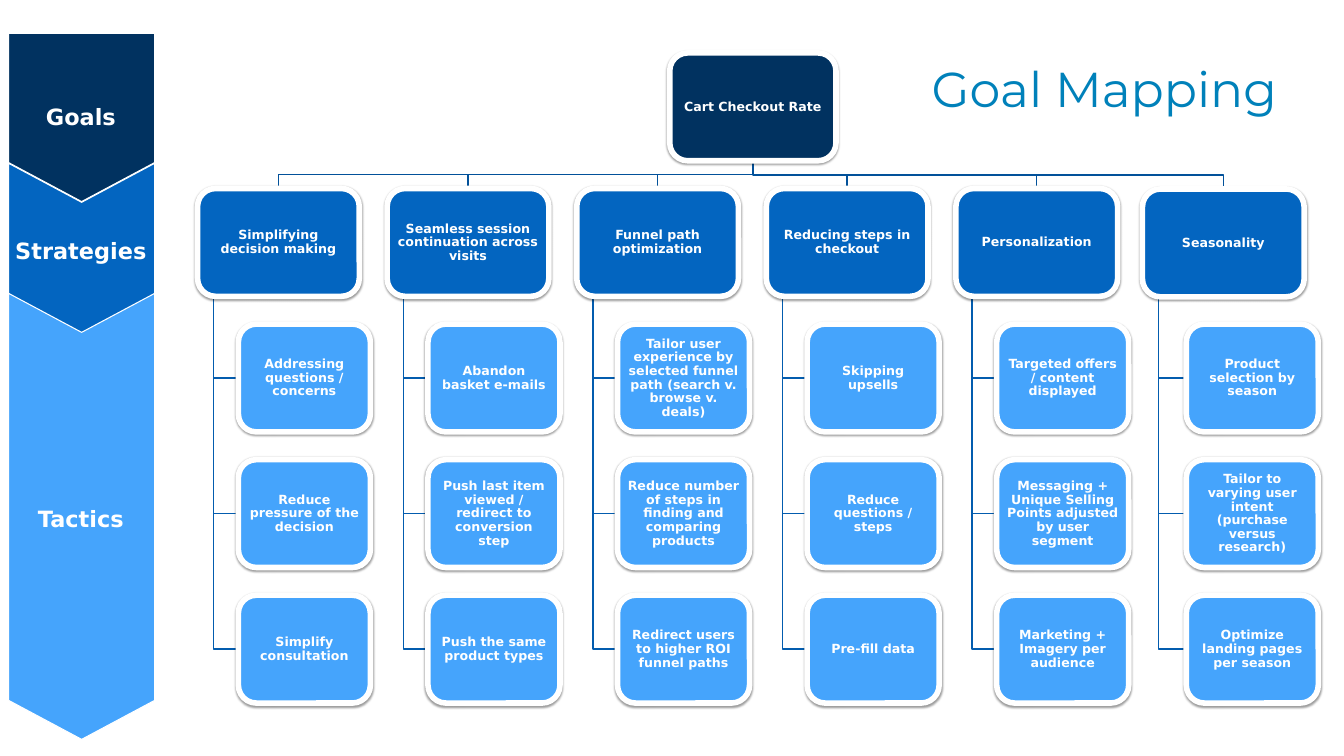
from lxml import etree
from pptx import Presentation
from pptx.dml.color import RGBColor
from pptx.enum import shapes, text
from pptx.oxml import ns
from pptx.util import Inches, Pt

COLORS = {
    "goal": "013260",
    "strategy": "0365C0",
    "tactic": "45A4FC",
    "trunk": "02519A",
    "branch": "035CAE",
    "title": "0081BA",
    "white": "FFFFFF",
    "shadow": "000000",
}
CARD_HEIGHT = 2.14
ROOT_BOX = (13.29, 1.05, 3.3, CARD_HEIGHT)
STRATEGY_WIDTH = 3.21
TACTIC_WIDTH = 2.62
ROW_STEP = 2.69
STEM_OFFSET = 0.32

COLUMNS = [
    ("Simplifying decision making",
     ["Addressing questions / concerns",
      "Reduce pressure of the decision",
      "Simplify consultation"]),
    ("Seamless session continuation across visits",
     ["Abandon basket e-mails",
      "Push last item viewed / redirect to conversion step",
      "Push the same product types"]),
    ("Funnel path optimization",
     ["Tailor user experience by selected funnel path (search v. browse v. deals)",
      "Reduce number of steps in finding and comparing products",
      "Redirect users to higher ROI funnel paths"]),
    ("Reducing steps in checkout",
     ["Skipping upsells", "Reduce questions / steps", "Pre-fill data"]),
    ("Personalization",
     ["Targeted offers / content displayed",
      "Messaging + Unique Selling Points adjusted by user segment",
      "Marketing + Imagery per audience"]),
    ("Seasonality",
     ["Product selection by season",
      "Tailor to varying user intent (purchase versus research)",
      "Optimize landing pages per season"]),
]


def color(name):
    return RGBColor.from_string(COLORS[name])


def write(shape, words, size, font="DejaVu Sans", ink="white", bold=True,
          spacing=1.0, insets=(0, 0, 0, 0)):
    frame = shape.text_frame
    frame.word_wrap = True
    frame.vertical_anchor = text.MSO_ANCHOR.MIDDLE
    (frame.margin_left, frame.margin_top,
     frame.margin_right, frame.margin_bottom) = map(Inches, insets)
    paragraph = frame.paragraphs[0]
    paragraph.alignment = text.PP_ALIGN.CENTER
    paragraph.line_spacing = spacing
    run = paragraph.add_run()
    run.text = words
    run.font.name = font
    run.font.size = Pt(size)
    run.font.bold = bold
    run.font.color.rgb = color(ink)


def add_label(slide, box, words, size, **style):
    write(slide.shapes.add_textbox(*map(Inches, box)), words, size, **style)


def add_filled(slide, kind, box, fill, line_width):
    shape = slide.shapes.add_shape(kind, *map(Inches, box))
    shape.shadow.inherit = False
    shape.fill.solid()
    shape.fill.fore_color.rgb = color(fill)
    shape.line.color.rgb = color("white")
    shape.line.width = Pt(line_width)
    return shape


def add_soft_shadow(shape):
    effects = shape._element.spPr.find(ns.qn("a:effectLst"))
    shadow = etree.SubElement(effects, ns.qn("a:outerShdw"), blurRad=str(Pt(3.1)),
                              dist=str(Pt(1.6)), dir="5400000", rotWithShape="0")
    tint = etree.SubElement(shadow, ns.qn("a:srgbClr"), val=COLORS["shadow"])
    etree.SubElement(tint, ns.qn("a:alpha"), val="38000")


def add_card(slide, box, fill, words):
    card = add_filled(slide, shapes.MSO_SHAPE.ROUNDED_RECTANGLE, box, fill, 8)
    add_soft_shadow(card)
    write(card, words, 18, spacing=0.9, insets=(0.1, 0.02, 0.1, 0.01))


def add_elbow(slide, points, ink):
    start, *rest = [(Inches(x), Inches(y)) for x, y in points]
    builder = slide.shapes.build_freeform(*start)
    builder.add_line_segments(rest, close=False)
    elbow = builder.convert_to_shape()
    elbow.shadow.inherit = False
    elbow.fill.background()
    elbow.line.color.rgb = color(ink)
    elbow.line.width = Pt(2)


def add_column(slide, left, top, tactic_left, tactic_top, strategy, tactics):
    root_left, root_top, root_width, root_height = ROOT_BOX
    root_x, root_bottom = root_left + root_width / 2, root_top + root_height
    center = left + STRATEGY_WIDTH / 2
    middle = (root_bottom + top) / 2
    stem = left + STEM_OFFSET
    tops = [tactic_top + row * ROW_STEP for row in range(len(tactics))]

    for y in tops:
        branch_y = y + CARD_HEIGHT / 2
        add_elbow(slide, [(stem, top + CARD_HEIGHT), (stem, branch_y),
                          (tactic_left, branch_y)], "branch")
    add_elbow(slide, [(root_x, root_bottom), (root_x, middle),
                      (center, middle), (center, top)], "trunk")
    add_card(slide, (left, top, STRATEGY_WIDTH, CARD_HEIGHT), "strategy", strategy)
    for y, words in zip(tops, tactics):
        add_card(slide, (tactic_left, y, TACTIC_WIDTH, CARD_HEIGHT), "tactic", words)


def add_tree(slide, left, top):
    step = 3.762
    last = len(COLUMNS) - 1
    for index, (strategy, tactics) in enumerate(COLUMNS):
        column_left = left + index * step
        shift_x, shift_y = (-0.06, 0.01) if index == last else (0, 0)
        add_column(slide, column_left + shift_x, top + shift_y,
                   column_left + 0.81, top + ROW_STEP, strategy, tactics)
    add_card(slide, ROOT_BOX, "goal", "Cart Checkout Rate")


def add_arrow_band(slide, box, fill):
    arrow = add_filled(slide, shapes.MSO_SHAPE.DOWN_ARROW, box, fill, 1.5)
    arrow.adjustments[0] = 1
    arrow.adjustments[1] = 0.267


def add_chevron_band(slide, box, fill):
    left, top, width, height = box
    offset = (height - width) / 2
    chevron = add_filled(slide, shapes.MSO_SHAPE.CHEVRON,
                         (left - offset, top + offset, height, width), fill, 1.5)
    chevron.adjustments[0] = 0.267
    chevron.rotation = 90


def add_level_bands(slide, left, width):
    bands = [
        ("Goals", "goal", add_arrow_band, 0.66, 3.34, 0.66, 3.18),
        ("Strategies", "strategy", add_chevron_band, 3.24, 3.54, 4, 1.83),
        ("Tactics", "tactic", add_chevron_band, 5.82, 8.85, 6.58, 7.33),
    ]
    for words, fill, add_band, top, height, label_top, label_height in bands:
        add_band(slide, (left, top, width, height), fill)
        add_label(slide, (left, label_top, width - 0.03, label_height), words, 32,
                  spacing=1.2)


def main():
    presentation = Presentation()
    presentation.slide_width = Inches(26.67)
    presentation.slide_height = Inches(15)
    slide = presentation.slides.add_slide(presentation.slide_layouts[6])
    add_tree(slide, 3.92, 3.74)
    add_level_bands(slide, 0.17, 2.9)
    add_label(slide, (17.83, 0.5, 8.17, 2.5), "Goal Mapping", 70,
              font="Montserrat", ink="title", bold=False)
    presentation.save("out.pptx")


if __name__ == "__main__":
    main()
